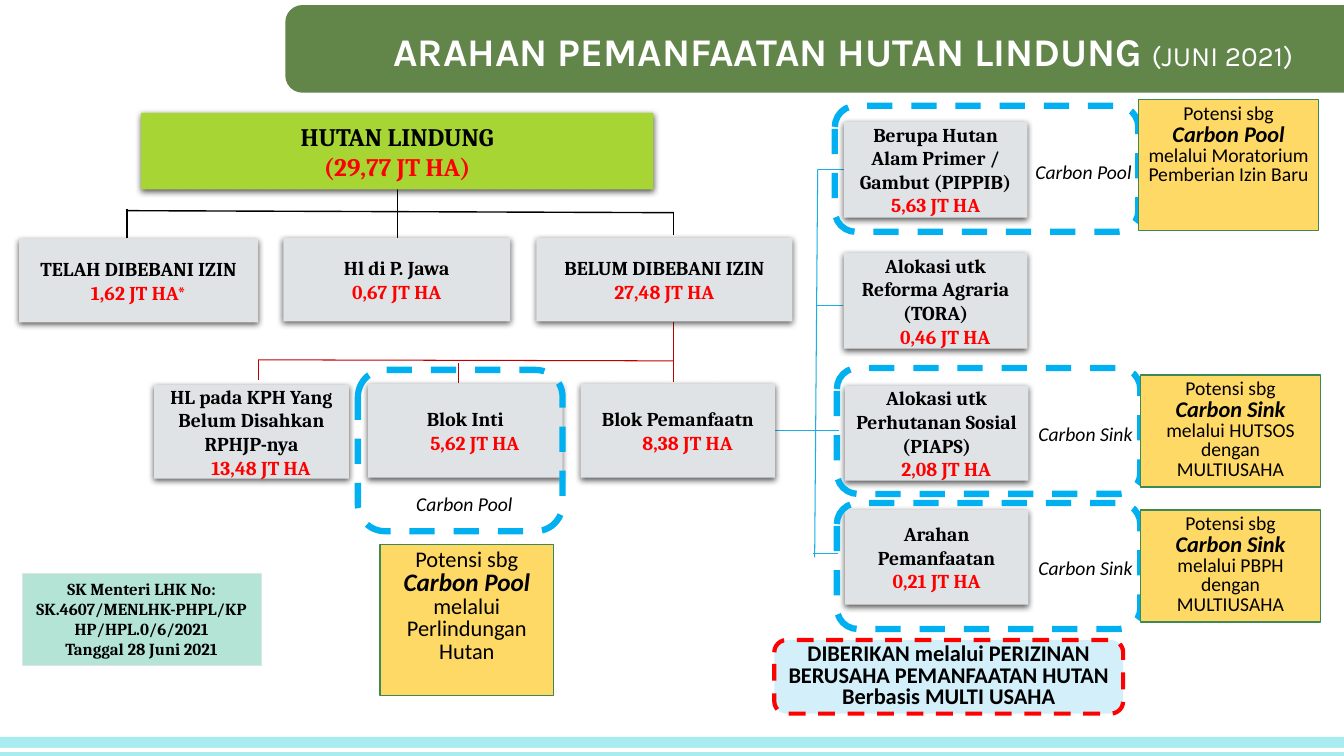
"""Build the slide on the use of protection forest, June 2021."""
from lxml import etree
from pptx import Presentation
from pptx.dml.color import RGBColor
from pptx.enum.dml import MSO_LINE
from pptx.enum.shapes import MSO_CONNECTOR, MSO_SHAPE
from pptx.enum.text import MSO_ANCHOR, PP_ALIGN
from pptx.oxml import parse_xml
from pptx.oxml.ns import nsdecls, qn
from pptx.util import Inches, Pt

C = {"band": "62854A", "aqua": "A8ECEF", "white": "FFFFFF", "black": "000000",
     "card": "DFE3E5", "lime": "A7D534", "red": "FF0000", "dark_red": "C00000",
     "frame": "00B0F0", "blue": "1CADE4", "pale": "D2EFFA", "yellow": "FFD966",
     "green": "3E8853", "mint": "B3E4D6"}
C = {name: RGBColor.from_string(value) for name, value in C.items()}
SHADOW = (f'<a:effectLst {nsdecls("a")}><a:outerShdw blurRad="57150" dist="19050" dir="5400000" '
          'algn="ctr" rotWithShape="0"><a:srgbClr val="000000"><a:alpha val="63000"/></a:srgbClr>'
          '</a:outerShdw></a:effectLst>')


def box(at, fill=None, line=None, width=1, dash=False, adj=None):
    """Add a rectangle, rounded when adj is given."""
    kind = MSO_SHAPE.RECTANGLE if adj is None else MSO_SHAPE.ROUNDED_RECTANGLE
    sp = s.shapes.add_shape(kind, *map(Inches, at))
    sp.shadow.inherit = False
    if adj is not None:
        sp.adjustments[0] = adj
    if fill:
        sp.fill.solid()
        sp.fill.fore_color.rgb = C[fill]
    else:
        sp.fill.background()
    if line:
        sp.line.color.rgb = C[line]
        sp.line.width = Pt(width)
        if dash:
            sp.line.dash_style = MSO_LINE.DASH
    else:
        sp.line.fill.background()
    return sp


def style(p, font, size=None, color="black", bold=None, italic=None, align=PP_ALIGN.CENTER):
    """Set alignment and font of a paragraph."""
    p.alignment = align
    p.font.name = font
    p.font.color.rgb = C[color]
    p.font.bold, p.font.italic = bold, italic
    if size:
        p.font.size = Pt(size)


prs = Presentation()
prs.slide_width, prs.slide_height = Inches(13.33), Inches(7.5)
s = prs.slides.add_slide(prs.slide_layouts[5])

box((2.83, 0.05, 11.23, 0.87), "band", adj=0.196)
box((0, 7.31, 13.33, 0.19), "aqua")
box((0, 7.42, 13.33, 0.04), "white")

title = s.shapes.title
s.shapes._spTree.append(title._element)
title.left, title.top, title.width, title.height = map(Inches, (3.1, 0.03, 10.23, 0.94))
tf = title.text_frame
tf.vertical_anchor = MSO_ANCHOR.MIDDLE
p = tf.paragraphs[0]
p._p.get_or_add_pPr().set("marL", str(Inches(0.3)))
style(p, "Karla", color="white")
for text, size, bold in [("ARAHAN PEMANFAATAN HUTAN LINDUNG ", 28, True),
                         ("(JUNI 2021)", 20, False)]:
    r = p.add_run()
    r.text, r.font.size, r.font.bold = text, Pt(size), bold

lines = [
    ("black", 1, [(1.25, 2.09, 6.68, 2.11), (3.94, 1.87, 3.94, 2.36),
                  (1.26, 2.07, 1.26, 2.36), (6.68, 2.1, 6.68, 2.33)]),
    ("dark_red", 0.75, [(6.68, 3.19, 6.68, 3.79), (2.56, 3.57, 6.68, 3.58),
                        (2.56, 3.57, 2.56, 3.77), (4.55, 3.6, 4.55, 3.8)]),
    ("blue", 0.75, [(8.11, 1.68, 8.08, 5.53), (7.68, 4.27, 8.11, 4.27),
                    (8.11, 1.68, 8.37, 1.68), (8.1, 3.03, 8.36, 3.03),
                    (8.07, 4.27, 8.32, 4.27), (8.06, 5.49, 8.31, 5.49)]),
]
for color, width, ends in lines:
    for end in ends:
        cn = s.shapes.add_connector(MSO_CONNECTOR.STRAIGHT, *map(Inches, end))
        cn.line.color.rgb = C[color]
        cn.line.width = Pt(width)
        etree.SubElement(cn._element.spPr, qn("a:effectLst"))

cards = [
    ((1.4, 1.12, 5.08, 0.76), "HUTAN LINDUNG", "(29,77 JT HA)", 0),
    ((0.19, 2.37, 2.37, 0.83), "TELAH DIBEBANI IZIN", "1,62 JT HA*", 0),
    ((2.81, 2.36, 2.25, 0.83), "Hl di P. Jawa", "0,67 JT HA", 0),
    ((5.32, 2.36, 2.54, 0.83), "BELUM DIBEBANI IZIN", "27,48 JT HA", 0),
    ((1.53, 3.82, 1.93, 0.93), "HL pada KPH Yang Belum Disahkan RPHJP-nya", "13,48 JT HA", 0.19),
    ((3.65, 3.81, 1.93, 0.93), "Blok Inti", "5,62 JT HA", 0.19),
    ((5.76, 3.81, 1.93, 0.93), "Blok Pemanfaatn", "8,38 JT HA", 0.19),
    ((8.37, 1.21, 1.82, 0.95), "Berupa Hutan Alam Primer / Gambut (PIPPIB)", "5,63 JT HA", 0),
    ((8.37, 2.51, 1.82, 0.95), "Alokasi utk Reforma Agraria (TORA)", "0,46 JT HA", 0.19),
    ((8.38, 3.83, 1.82, 0.94), "Alokasi utk Perhutanan Sosial (PIAPS)", "2,08 JT HA", 0.19),
    ((8.38, 5.06, 1.82, 0.94), "Arahan Pemanfaatan", "0,21 JT HA", 0),
]
for i, (at, name, area, indent) in enumerate(cards):
    sp = box(at, "card" if i else "lime")
    sp._element.spPr.remove(sp._element.spPr.find(qn("a:effectLst")))
    sp._element.spPr.append(parse_xml(SHADOW))
    tf = sp.text_frame
    tf.word_wrap = True
    tf.vertical_anchor = MSO_ANCHOR.MIDDLE
    tf.text = f"{name}\n{area}"
    for p, color in zip(tf.paragraphs, ("black", "red")):
        style(p, "Cambria", 14 if i else 18, color, bold=True)
    if indent:
        p._p.get_or_add_pPr().set("marL", str(Inches(indent)))

groups = [
    ((3.55, 3.67, 2.03, 1.6), (4.03, 4.83), (3.77, 5.4, 1.72, 1.5), 16,
     "Carbon Pool", "melalui Perlindungan Hutan"),
    ((8.28, 1.05, 3.01, 1.25), (10.17, 1.54), (11.29, 0.99, 1.79, 1.3), 14,
     "Carbon Pool", "melalui Moratorium Pemberian Izin Baru"),
    ((8.3, 3.65, 3.01, 1.25), (10.2, 4.14), (11.31, 3.72, 1.79, 1.11), 14,
     "Carbon Sink", "melalui HUTSOS dengan MULTIUSAHA"),
    ((8.3, 4.99, 3.01, 1.25), (10.2, 5.47), (11.31, 5.06, 1.79, 1.11), 14,
     "Carbon Sink", "melalui PBPH dengan MULTIUSAHA"),
]
for frame, label, note, size, carbon, means in groups:
    box(frame, line="frame", width=4.5, dash=True, adj=0.167)

    tf = s.shapes.add_textbox(*map(Inches, (*label, 1.39, 0.34))).text_frame
    tf.word_wrap = True
    tf.text = carbon
    style(tf.paragraphs[0], "Calibri", 14, italic=True, align=PP_ALIGN.LEFT)

    tf = box(note, "yellow", "green").text_frame
    tf.word_wrap = True
    tf.vertical_anchor = MSO_ANCHOR.TOP
    p = tf.paragraphs[0]
    p.line_spacing = 0.83
    style(p, "Calibri")
    for text, strong in [("Potensi sbg ", False), (f"{carbon} ", True), (means, False)]:
        r = p.add_run()
        r.text, r.font.size = text, Pt(size + 2 if strong else size)
        r.font.bold = r.font.italic = strong

tf = box((7.68, 6.35, 3.46, 0.73), "pale", "red", 3, dash=True, adj=0.167).text_frame
tf.word_wrap = True
tf.vertical_anchor = MSO_ANCHOR.MIDDLE
tf.margin_left = tf.margin_right = tf.margin_top = tf.margin_bottom = Inches(0.04)
tf.text = "DIBERIKAN melalui PERIZINAN BERUSAHA PEMANFAATAN HUTAN Berbasis MULTI USAHA"
p = tf.paragraphs[0]
p.line_spacing = 0.8
style(p, "Calibri", 16, bold=True)

tf = box((0.22, 5.69, 2.37, 0.91), "mint", "card", 0.75).text_frame
tf.word_wrap = True
tf.vertical_anchor = MSO_ANCHOR.TOP
tf.text = "SK Menteri LHK No: SK.4607/MENLHK-PHPL/KPHP/HPL.0/6/2021\nTanggal 28 Juni 2021"
for p in tf.paragraphs:
    style(p, "Cambria", 12, bold=True)

prs.save("out.pptx")
